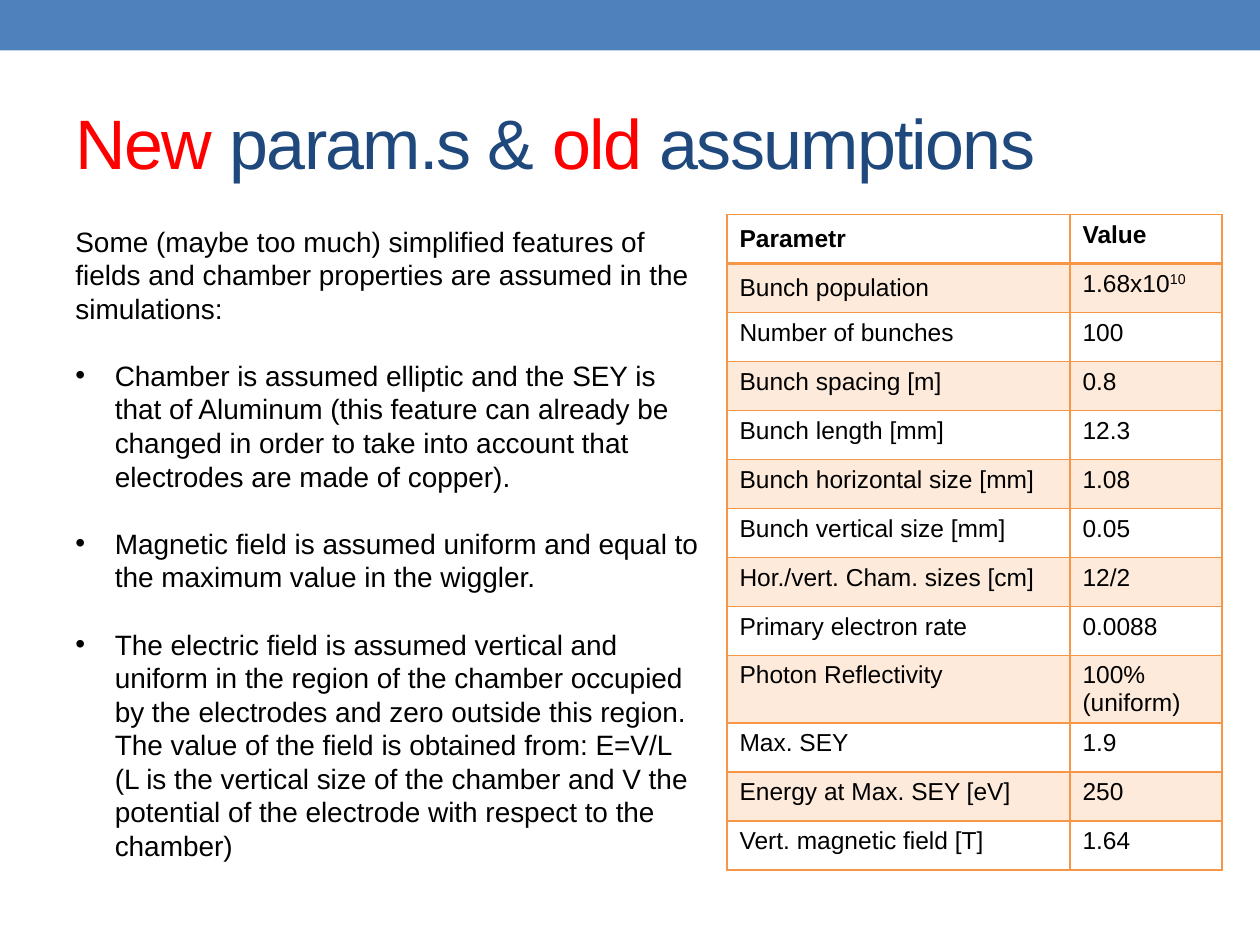
from dataclasses import dataclass

from lxml.etree import SubElement
from pptx import Presentation
from pptx.dml.color import RGBColor
from pptx.enum.shapes import MSO_SHAPE
from pptx.enum.text import MSO_ANCHOR, MSO_AUTO_SIZE, PP_ALIGN
from pptx.oxml.ns import qn
from pptx.util import Pt


@dataclass(frozen=True)
class Theme:
    font: str = "Arial"
    band: str = "4F81BD"
    heading: str = "1F497D"
    highlight: str = "FF0000"
    text: str = "000000"
    accent: str = "F79646"
    tint_percent: int = 20
    title_size: float = 40
    body_size: float = 16
    table_size: float = 14
    body_leading: float = 19.2


THEME = Theme()

TITLE = [
    ("New ", THEME.highlight),
    ("param.s & ", THEME.heading),
    ("old ", THEME.highlight),
    ("assumptions", THEME.heading),
]

INTRO = ("Some (maybe too much) simplified features of fields and chamber "
         "properties are assumed in the simulations:")

ASSUMPTIONS = [
    "Chamber is assumed elliptic and the SEY is that of Aluminum (this feature "
    "can already be changed in order to take into account that electrodes are "
    "made of copper).",
    "Magnetic field is assumed uniform and equal to the maximum value in the "
    "wiggler.",
    "The electric field is assumed vertical and uniform in the region of the "
    "chamber occupied by the electrodes and zero outside this region. The value "
    "of the field is obtained from: E=V/L (L is the vertical size of the chamber "
    "and V the potential of the electrode with respect to the chamber)",
]

# Each value is its text, then an optional exponent
PARAMETERS = [
    ("Parametr", "Value"),
    ("Bunch population", "1.68x10", "10"),
    ("Number of bunches", "100"),
    ("Bunch spacing [m]", "0.8"),
    ("Bunch length [mm]", "12.3"),
    ("Bunch horizontal size [mm]", "1.08"),
    ("Bunch vertical size [mm]", "0.05"),
    ("Hor./vert. Cham. sizes [cm]", "12/2"),
    ("Primary electron rate", "0.0088"),
    ("Photon Reflectivity", "100% (uniform)"),
    ("Max. SEY", "1.9"),
    ("Energy at Max. SEY [eV]", "250"),
    ("Vert. magnetic field [T]", "1.64"),
]
COLUMN_WIDTHS = (196, 87)
ROW_HEIGHT = 28
TWO_LINE_ROW, TWO_LINE_HEIGHT = 9, 38.5


def add_run(paragraph, text, size, color=THEME.text, bold=False):
    run = paragraph.add_run()
    run.text = text
    run.font.name = THEME.font
    run.font.size = Pt(size)
    run.font.bold = bold
    run.font.color.rgb = RGBColor.from_string(color)
    return run


def add_band(slide, width):
    band = slide.shapes.add_shape(MSO_SHAPE.RECTANGLE, 0, 0, width, Pt(28.8))
    band.shadow.inherit = False
    band.fill.solid()
    band.fill.fore_color.rgb = RGBColor.from_string(THEME.band)
    band.line.fill.background()


def fill_title(slide):
    title = slide.shapes.title
    title.left, title.top, title.width, title.height = Pt(36), Pt(42), Pt(648), Pt(78)
    frame = title.text_frame
    frame.vertical_anchor = MSO_ANCHOR.MIDDLE
    paragraph = frame.paragraphs[0]
    paragraph.alignment = PP_ALIGN.LEFT
    for text, color in TITLE:
        run = add_run(paragraph, text, THEME.title_size, color)
        run._r.get_or_add_rPr().set("spc", "-100")


def make_bullet(paragraph, indent):
    properties = paragraph._p.get_or_add_pPr()
    properties.set("marL", str(indent))
    properties.set("indent", str(-indent))
    SubElement(properties, qn("a:buFont")).set("typeface", THEME.font)
    SubElement(properties, qn("a:buChar")).set("char", "•")


def add_assumptions(slide):
    box = slide.shapes.add_textbox(Pt(36), Pt(124.5), Pt(372), Pt(376))
    frame = box.text_frame
    frame.word_wrap = True
    frame.auto_size = MSO_AUTO_SIZE.SHAPE_TO_FIT_TEXT
    intro = frame.paragraphs[0]
    intro.line_spacing = Pt(THEME.body_leading)
    add_run(intro, INTRO, THEME.body_size)
    for assumption in ASSUMPTIONS:
        paragraph = frame.add_paragraph()
        paragraph.line_spacing = paragraph.space_before = Pt(THEME.body_leading)
        make_bullet(paragraph, Pt(22.5))
        add_run(paragraph, assumption, THEME.body_size)


def set_borders(cell, **widths):
    properties = cell._tc.get_or_add_tcPr()
    for side in "LRTB":
        line = SubElement(properties, qn(f"a:ln{side}"))
        line.set("w", str(Pt(widths.get(side, 1))))
        fill = SubElement(line, qn("a:solidFill"))
        SubElement(fill, qn("a:srgbClr")).set("val", THEME.accent)


def fill_cell(cell, tinted):
    if not tinted:
        cell.fill.background()
        return
    cell.fill.solid()
    cell.fill.fore_color.rgb = RGBColor.from_string(THEME.accent)
    color = cell._tc.tcPr.find(f"{qn('a:solidFill')}/{qn('a:srgbClr')}")
    SubElement(color, qn("a:alpha")).set("val", str(THEME.tint_percent * 1000))


def add_parameter_table(slide):
    height = ROW_HEIGHT * (len(PARAMETERS) - 1) + TWO_LINE_HEIGHT
    table = slide.shapes.add_table(len(PARAMETERS), len(COLUMN_WIDTHS), Pt(415.4),
                                   Pt(122.7), Pt(sum(COLUMN_WIDTHS)), Pt(height)).table
    table.first_row = table.horz_banding = False
    for column, width in zip(table.columns, COLUMN_WIDTHS):
        column.width = Pt(width)
    # The rule under the header is heavier than the others
    header_rule = {0: {"B": 2}, 1: {"T": 2}}
    for index, (name, value, *exponent) in enumerate(PARAMETERS):
        table.rows[index].height = Pt(
            TWO_LINE_HEIGHT if index == TWO_LINE_ROW else ROW_HEIGHT)
        for column, text in enumerate((name, value)):
            cell = table.cell(index, column)
            set_borders(cell, **header_rule.get(index, {}))
            fill_cell(cell, tinted=index % 2 == 1)
            centred = column == 0 and index < 2
            cell.vertical_anchor = MSO_ANCHOR.MIDDLE if centred else MSO_ANCHOR.TOP
            paragraph = cell.text_frame.paragraphs[0]
            add_run(paragraph, text, THEME.table_size, bold=index == 0)
        for power in exponent:
            run = add_run(paragraph, power, THEME.table_size)
            run._r.get_or_add_rPr().set("baseline", "30000")


def main():
    deck = Presentation()
    deck.slide_width, deck.slide_height = Pt(720), Pt(540)
    slide = deck.slides.add_slide(deck.slide_layouts.get_by_name("Title Only"))

    # Heading
    add_band(slide, deck.slide_width)
    fill_title(slide)

    # Parameters on the right, assumptions on the left
    add_parameter_table(slide)
    add_assumptions(slide)

    deck.save("out.pptx")


if __name__ == "__main__":
    main()
